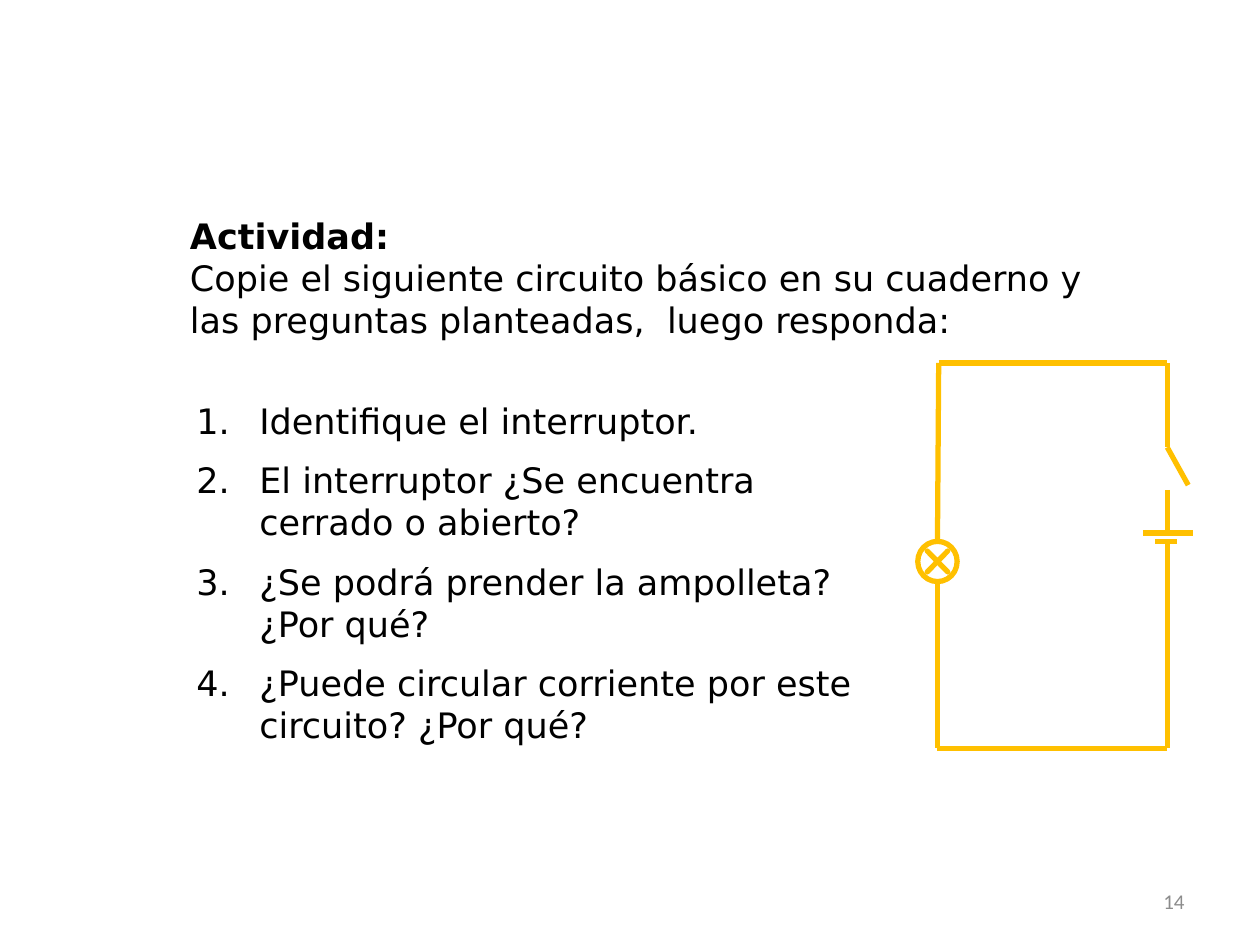
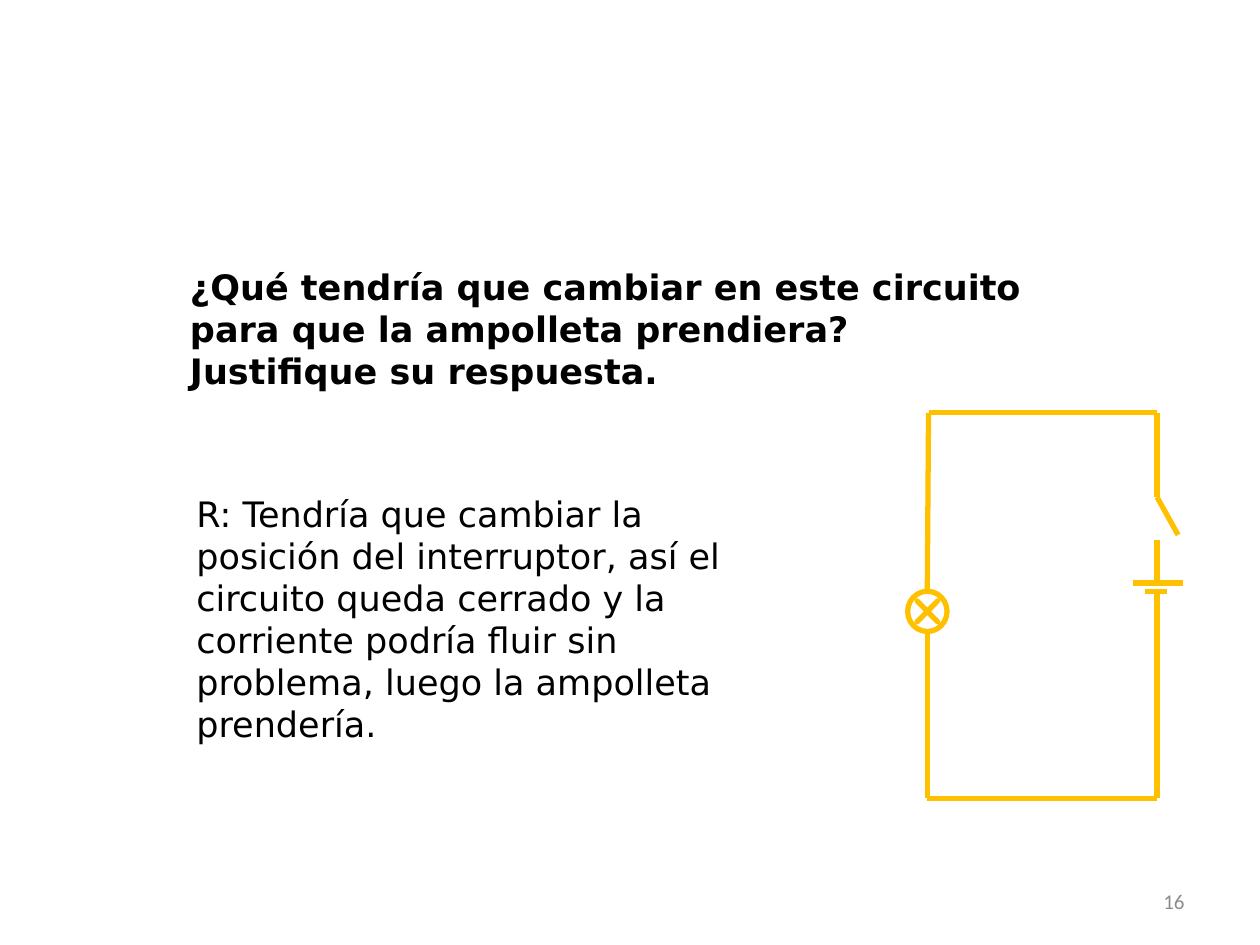
from dataclasses import dataclass

from lxml.etree import SubElement
from pptx import Presentation
from pptx.dml.color import RGBColor
from pptx.enum.shapes import MSO_CONNECTOR, MSO_SHAPE
from pptx.enum.text import MSO_ANCHOR, PP_ALIGN
from pptx.oxml.ns import qn
from pptx.util import Pt


@dataclass(frozen=True)
class Theme:
    ink: RGBColor = RGBColor(0x00, 0x00, 0x00)
    muted: RGBColor = RGBColor(0x8C, 0x8C, 0x8C)
    paper: RGBColor = RGBColor(0xFF, 0xFF, 0xFF)
    wire: RGBColor = RGBColor(0xFF, 0xC0, 0x00)
    wire_width: float = 3
    body_font: str = "DejaVu Sans"
    number_font: str = "Calibri"
    body_size: float = 20
    number_size: float = 12
    paragraph_gap: float = 10
    number_indent: float = 36


THEME = Theme()


def number_paragraph(paragraph):
    properties = paragraph._p.get_or_add_pPr()
    indent = Pt(THEME.number_indent)
    properties.set("marL", str(indent))
    properties.set("indent", str(-indent))
    SubElement(properties, qn("a:buFont"), typeface="+mj-lt")
    SubElement(properties, qn("a:buAutoNum"), type="arabicPeriod")


def add_text(slide, text, left, top, width, height, bold_lines=0, numbered=False,
             font=THEME.body_font, size=THEME.body_size, color=THEME.ink,
             anchor=MSO_ANCHOR.TOP, align=PP_ALIGN.LEFT):
    frame = slide.shapes.add_textbox(Pt(left), Pt(top), Pt(width), Pt(height)).text_frame
    frame.word_wrap = True
    frame.vertical_anchor = anchor
    for index, content in enumerate([text] if isinstance(text, str) else text):
        paragraph = frame.add_paragraph() if index else frame.paragraphs[0]
        paragraph.alignment = align
        if index:
            paragraph.space_before = Pt(THEME.paragraph_gap)
        if numbered:
            number_paragraph(paragraph)
        for row, line in enumerate(content.split("\n")):
            if row:
                paragraph.add_line_break()
            run = paragraph.add_run()
            run.text = line
            run.font.name = font
            run.font.size = Pt(size)
            run.font.bold = row < bold_lines
            run.font.color.rgb = color
        paragraph.font.size = Pt(size)


def add_title(slide, text, top, bold_lines):
    add_text(slide, text, 101.5, top, 532.8, 49.7, bold_lines=bold_lines,
             anchor=MSO_ANCHOR.MIDDLE)


def add_slide_number(slide, number):
    add_text(slide, str(number), 516.2, 500.4, 167.8, 28.8, font=THEME.number_font,
             size=THEME.number_size, color=THEME.muted,
             anchor=MSO_ANCHOR.MIDDLE, align=PP_ALIGN.RIGHT)


def style_wire(line):
    line.color.rgb = THEME.wire
    line.width = Pt(THEME.wire_width)


def add_wire(circuit, start, end):
    wire = circuit.shapes.add_connector(
        MSO_CONNECTOR.STRAIGHT, *(Pt(value) for value in (*start, *end)))
    style_wire(wire.line)
    SubElement(wire._element.spPr, qn("a:effectLst"))


def add_lamp(circuit, left, top):
    for outline in (MSO_SHAPE.OVAL, MSO_SHAPE.MATH_MULTIPLY):
        part = circuit.shapes.add_shape(outline, Pt(left), Pt(top), Pt(23), Pt(22.5))
        part.rotation = 90
        part.shadow.inherit = False
        style_wire(part.line)
        if outline == MSO_SHAPE.OVAL:
            part.fill.solid()
            part.fill.fore_color.rgb = THEME.paper
        else:
            part.fill.background()
            part.adjustments[0] = 0


def add_circuit(slide, left, top):
    circuit = slide.shapes.add_group_shape()
    right, bottom = 131.3, 220.3
    positive, negative = 97.2, 102.2
    lamp_top, lamp_bottom = 102.2, 125
    switch_top, switch_bottom = 48.2, 72.5
    wires = [
        ((117.4, positive), (146.2, positive)),
        ((124.6, negative), (136.8, negative)),
        ((0.7, 0), (right, 0)),
        ((right, switch_bottom), (right, positive)),
        ((0.7, 0), (0, lamp_top)),
        ((0, lamp_bottom), (0, bottom)),
        ((0, bottom), (right, bottom)),
        ((right, negative), (right, bottom)),
        ((right, 0), (right, switch_top)),
        ((right, switch_top), (143.3, 69.8)),
    ]
    for (x1, y1), (x2, y2) in wires:
        add_wire(circuit, (left + x1, top + y1), (left + x2, top + y2))
    add_lamp(circuit, left - 11.5, top + lamp_top)


def build_activity(slide):
    add_circuit(slide, 535.7, 207.4)
    add_text(slide, [
        "Identifique el interruptor.",
        "El interruptor ¿Se encuentra cerrado o abierto?",
        "¿Se podrá prender la ampolleta? ¿Por qué?",
        "¿Puede circular corriente por este circuito? ¿Por qué?",
    ], 105.1, 224.6, 396.7, 213.1, numbered=True)
    add_title(slide, "Actividad:\nCopie el siguiente circuito básico en su cuaderno y "
              "las preguntas planteadas,  luego responda:", 133.9, bold_lines=1)
    add_slide_number(slide, 14)


def build_answer(slide):
    add_title(slide, "¿Qué tendría que cambiar en este circuito para que la ampolleta "
              "prendiera?\nJustifique su respuesta.", 163, bold_lines=2)
    add_text(slide, "R: Tendría que cambiar la posición del interruptor, así el circuito "
             "queda cerrado y la corriente podría fluir sin problema, luego la ampolleta "
             "prendería.", 105.1, 277.9, 323.3, 152.6)
    add_circuit(slide, 529.9, 235.9)
    add_slide_number(slide, 16)


def main():
    deck = Presentation()
    deck.slide_width, deck.slide_height = Pt(720), Pt(540)
    for build in (build_activity, build_answer):
        build(deck.slides.add_slide(deck.slide_layouts[6]))
    deck.save("out.pptx")


if __name__ == "__main__":
    main()
